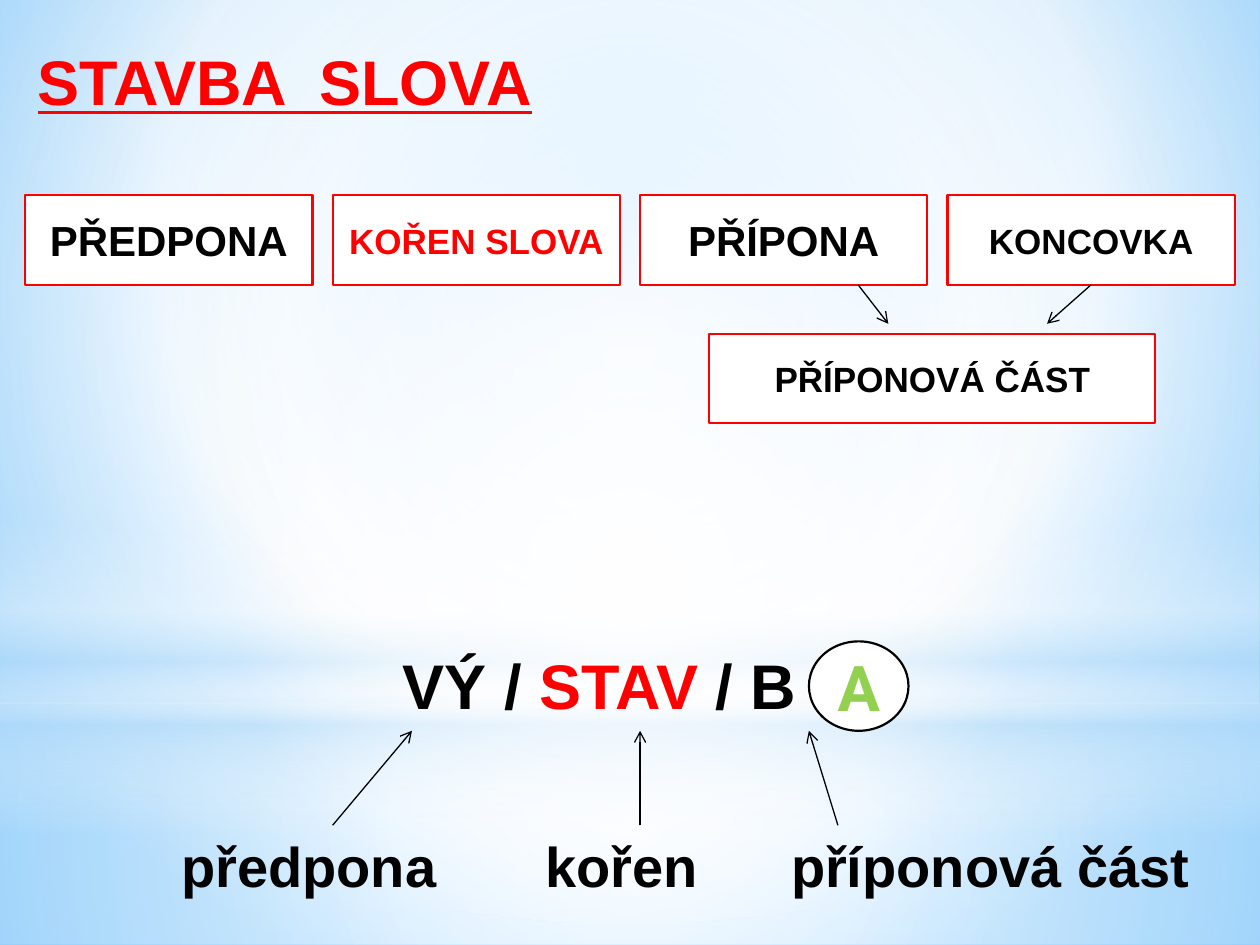
"""Build a slide on the structure of a word."""
from dataclasses import dataclass

from lxml import etree
from pptx import Presentation
from pptx.dml.color import RGBColor
from pptx.enum.shapes import MSO_CONNECTOR, MSO_SHAPE
from pptx.enum.text import MSO_ANCHOR, PP_ALIGN
from pptx.oxml.ns import qn
from pptx.util import Inches, Pt

RECT, OVAL = MSO_SHAPE.RECTANGLE, MSO_SHAPE.OVAL
LINE = MSO_CONNECTOR.STRAIGHT
LEFT, MID = PP_ALIGN.LEFT, PP_ALIGN.CENTER
TOP, CORE = MSO_ANCHOR.TOP, MSO_ANCHOR.MIDDLE
COLS, ROWS = 100, 75
CELL = Inches(0.1)
CENTER = (50, 50, 50, 50)


@dataclass(frozen=True)
class Theme:
    """Hold the colours, fonts and sizes."""
    red: str = "FF0000"
    black: str = "000000"
    white: str = "FFFFFF"
    green: str = "92D050"
    sky: str = "9ED5FF"
    blue: str = "5BB9FF"
    mist: str = "B4DCFA"
    font: str = "Arial"
    alt: str = "Roboto"
    big: int = 36
    label: int = 32
    mid: int = 24
    small: int = 20
    edge: float = 1.25
    thin: float = 0.75


T = Theme()


def grid(*cells):
    """Turn grid cells into lengths."""
    return [round(n * CELL) for n in cells]


def blend(fill, stops, focus=None):
    """Set a gradient that is round with a focus and vertical without."""
    fill.gradient()
    node = fill._fill._gradFill
    for kid in list(node):
        node.remove(kid)
    items = etree.SubElement(node, qn("a:gsLst"))
    for pos, color, alpha in stops:
        stop = etree.SubElement(items, qn("a:gs"), pos=str(pos * 1000))
        tint = etree.SubElement(stop, qn("a:srgbClr"), val=color)
        etree.SubElement(tint, qn("a:alpha"), val=str(alpha * 1000))
    if focus:
        way = etree.SubElement(node, qn("a:path"), path="circle")
        sides = {k: str(v * 1000) for k, v in zip("ltrb", focus)}
        etree.SubElement(way, qn("a:fillToRect"), **sides)
    else:
        etree.SubElement(node, qn("a:lin"), ang="5400000", scaled="0")


def write(shape, *runs, size=T.big, font=T.font, align=LEFT,
          anchor=TOP, under=False):
    """Write runs of text and colour into a shape."""
    frame = shape.text_frame
    frame.word_wrap, frame.vertical_anchor = True, anchor
    para = frame.paragraphs[0]
    para.alignment = align
    for text, color in runs:
        run = para.add_run()
        run.text = text
        style = run.font
        style.name, style.size = font, Pt(size)
        style.bold, style.underline = True, under
        style.color.rgb = RGBColor.from_string(color)


def label(slide, box, *runs, **style):
    """Place free text in a box."""
    write(slide.shapes.add_textbox(*grid(*box)), *runs, **style)


def panel(slide, box, kind, stops, focus=None):
    """Place a shape with a gradient and no line."""
    shape = slide.shapes.add_shape(kind, *grid(*box))
    shape.shadow.inherit = False
    shape.line.fill.background()
    blend(shape.fill, stops, focus)


def card(slide, box, text, color=T.black, kind=RECT, edge=T.red, **style):
    """Place a white outlined shape with centred text."""
    shape = slide.shapes.add_shape(kind, *grid(*box))
    shape.shadow.inherit = False
    shape.fill.solid()
    shape.fill.fore_color.rgb = RGBColor.from_string(T.white)
    shape.line.color.rgb = RGBColor.from_string(edge)
    shape.line.width = Pt(T.edge)
    write(shape, (text, color), align=MID, anchor=CORE, **style)


def arrow(slide, start, end):
    """Draw a thin arrow between two points."""
    link = slide.shapes.add_connector(LINE, *grid(*start, *end))
    link.line.color.rgb = RGBColor.from_string(T.black)
    link.line.width = Pt(T.thin)
    etree.SubElement(link.line._get_or_add_ln(), qn("a:tailEnd"), type="arrow")
    etree.SubElement(link._element.spPr, qn("a:effectLst"))


def scene(slide, box):
    """Paint the sky behind the words."""
    x, y, w, h = box
    split = 0.744 * h
    blend(slide.background.fill,
          [(0, T.sky, 100), (60, T.white, 100), (100, T.blue, 100)],
          (20, 10, 20, 60))
    panel(slide, (x, y + split, w, h - split), RECT,
          [(0, T.white, 91), (37, T.white, 76), (100, T.mist, 79)], CENTER)
    panel(slide, (x, y, w, split), RECT,
          [(0, T.white, 89), (48, T.white, 62), (100, T.mist, 79)], CENTER)
    panel(slide, (x, y + 0.55 * h, w, h / 3), RECT,
          [(0, T.white, 0), (29, T.white, 30), (45, T.mist, 40),
           (55, T.white, 26), (65, T.mist, 60), (100, T.white, 0)])
    panel(slide, (x, y + 0.233 * h, w, split), OVAL,
          [(0, T.white, 100), (56, T.white, 0)], CENTER)


def parts(slide, box):
    """Place the row of word parts and the part that joins two."""
    x, y, w, h = box
    gap, tall = 1.6, 7.1
    wide = (w - 3 * gap) / 4
    names = [("PŘEDPONA", T.black, T.mid), ("KOŘEN SLOVA", T.red, T.small),
             ("PŘÍPONA", T.black, T.mid), ("KONCOVKA", T.black, T.small)]
    for i, (name, color, size) in enumerate(names):
        card(slide, (x + i * (wide + gap), y, wide, tall), name, color,
             size=size)
    card(slide, (x + 54.3, y + h - tall, 35.4, tall), "PŘÍPONOVÁ ČÁST",
         size=T.small)
    for start, end in ((66.1, 68.5), (84.6, 81.1)):
        arrow(slide, (x + start, y + tall), (x + end, y + 10.2))


def sample(slide, box):
    """Place the split word with its labels and arrows."""
    x, y, w, h = box
    tall, foot = 7.1, 14.6
    label(slide, (x + 17.6, y - 0.1, 40, 6.7), ("VÝ / ", T.black),
          ("STAV", T.red), (" / B", T.black))
    card(slide, (x + 50.8, y, 7.9, tall), "A", T.green, OVAL, T.black,
         size=T.big, font=T.alt)
    names = [("předpona", 0, 27), ("kořen", 28.9, 18),
             ("příponová část", 48.4, w - 48.4)]
    for name, left, wide in names:
        label(slide, (x + left, y + foot, wide, h - foot), (name, T.black),
              size=T.label)
    for start, end in ((13, 19.3), (37.4, 37.4), (53.1, 50.8)):
        arrow(slide, (x + start, y + foot), (x + end, y + tall))


def main():
    """Build and save the slide."""
    deck = Presentation()
    deck.slide_width, deck.slide_height = grid(COLS, ROWS)
    slide = deck.slides.add_slide(deck.slide_layouts[6])
    scene(slide, (0, 0, COLS, ROWS))
    label(slide, (2, 2.9, 60, 6.7), ("STAVBA  SLOVA", T.red), under=True)
    parts(slide, (2, 15.5, 96, 18.1))
    sample(slide, (13.4, 50.9, 85, 21))
    deck.save("out.pptx")


if __name__ == "__main__":
    main()
